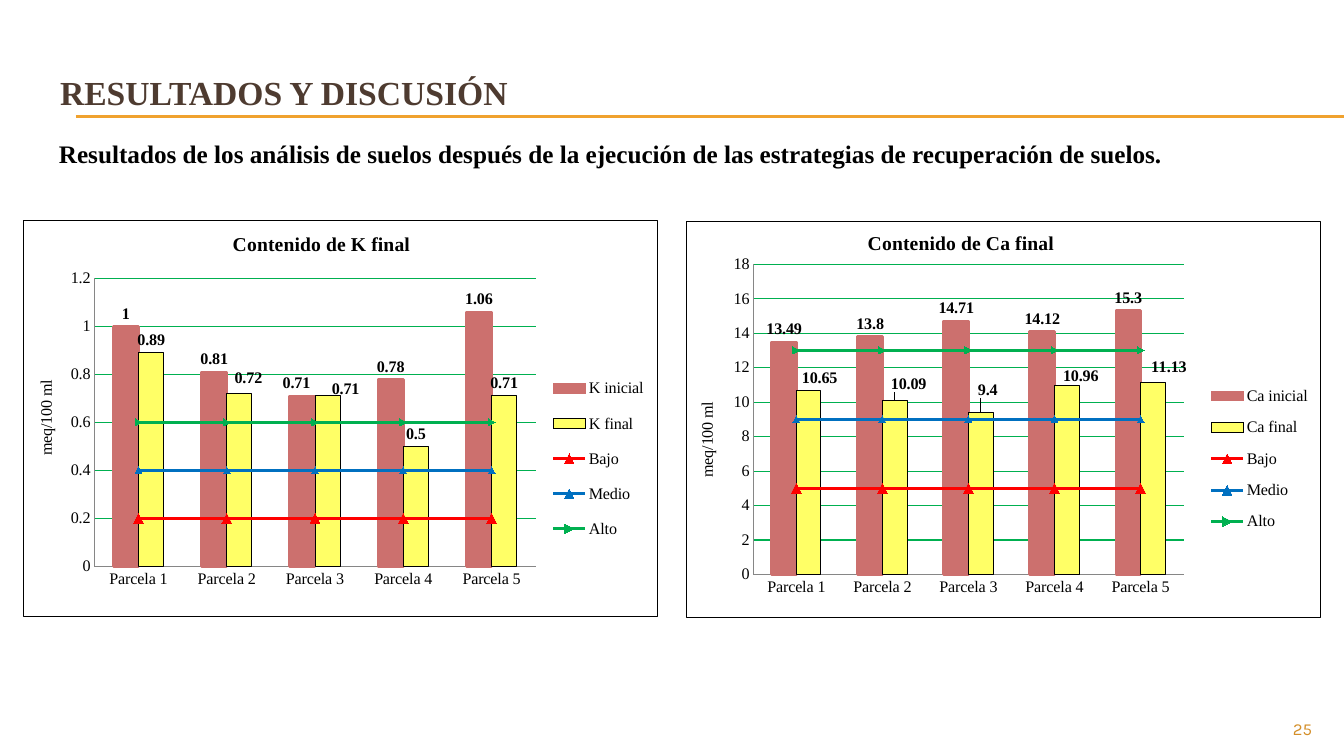
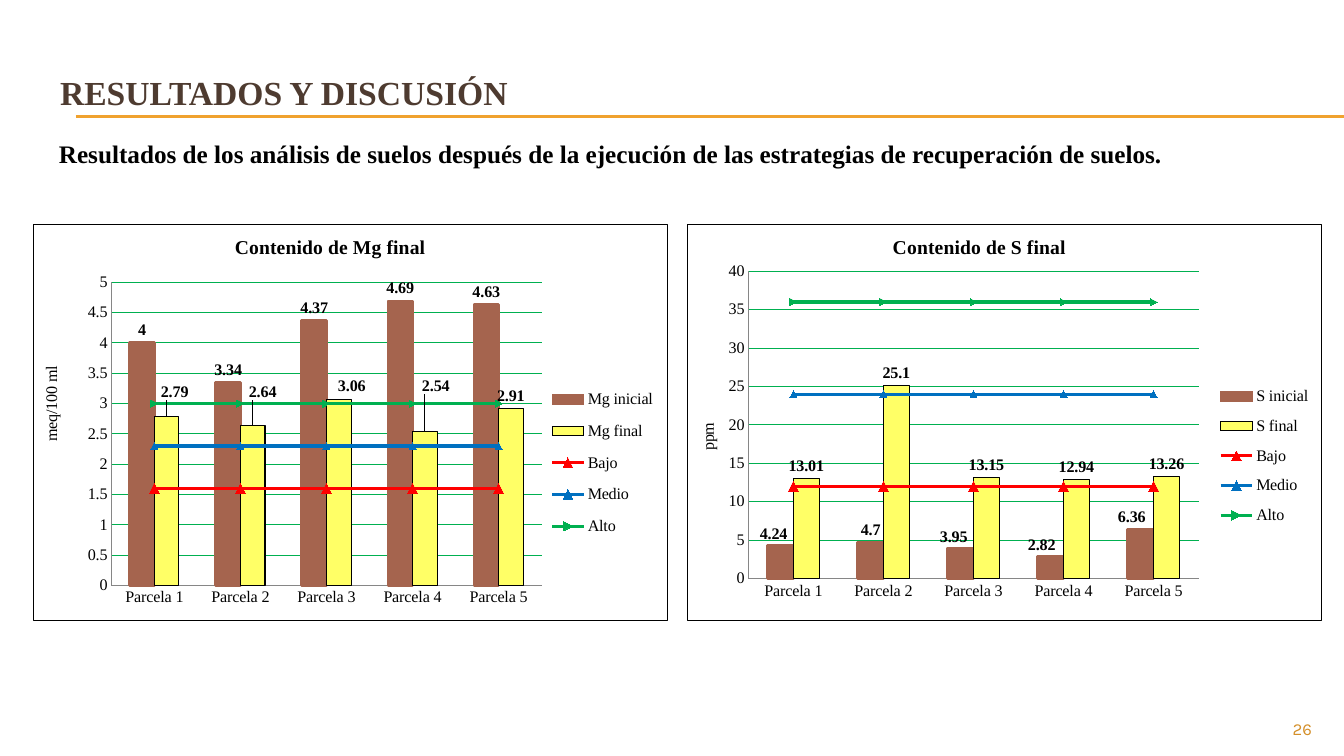
from copy import deepcopy
from dataclasses import dataclass, field

from lxml.etree import SubElement
from pptx import Presentation
from pptx.chart.data import CategoryChartData
from pptx.dml.color import RGBColor
from pptx.enum.chart import XL_CHART_TYPE as ChartType
from pptx.enum.chart import XL_LABEL_POSITION as LabelPosition
from pptx.enum.chart import XL_LEGEND_POSITION as LegendPosition
from pptx.enum.chart import XL_MARKER_STYLE as Marker
from pptx.enum.chart import XL_TICK_MARK as TickMark
from pptx.enum.shapes import MSO_CONNECTOR as Connector
from pptx.enum.text import MSO_ANCHOR as Anchor
from pptx.enum.text import MSO_AUTO_SIZE as AutoSize
from pptx.enum.text import PP_ALIGN as Align
from pptx.oxml import parse_xml
from pptx.oxml.ns import nsdecls, qn
from pptx.util import Emu, Pt

COLORS = {
    "title": "4E3B30",
    "rule": "F0A22E",
    "number": "D48F29",
    "black": "000000",
    "axis": "868686",
    "rose": "CC706E",
    "brown": "A5644E",
    "final": "FFFF66",
    "Bajo": "FF0000",
    "Medio": "0070C0",
    "Alto": "00B050",
}
SERIF = "Times New Roman"
EMU_PER_PX = 914400 / 100.8
CHART_WIDTH, CHART_HEIGHT = 635, 397
TITLE = "RESULTADOS Y DISCUSIÓN"
SUBTITLE = (
    "Resultados de los análisis de suelos después de la ejecución "
    "de las estrategias de recuperación de suelos."
)
PLOTS = [f"Parcela {number}" for number in range(1, 6)]


@dataclass
class SoilChart:
    element: str
    unit: str
    left: int
    top: int
    color: str
    initial: list
    final: list
    levels: list
    maximum: float
    step: float
    plot_box: tuple
    title_at: tuple
    unit_at: tuple
    legend_box: tuple
    initial_shifts: dict = field(default_factory=dict)
    final_shifts: dict = field(default_factory=dict)


SLIDES = {
    25: [
        SoilChart(
            "K", "meq/100 ml", 23, 220, "rose",
            [1, 0.81, 0.71, 0.78, 1.06], [0.89, 0.72, 0.71, 0.5, 0.71],
            [0.2, 0.4, 0.6], 1.2, 0.2,
            (71, 58, 442, 289), (206, 7), (10, 157), (519, 142, 114, 194),
            {2: (-6, 0)}, {1: (9, -3), 2: (18, 6)},
        ),
        SoilChart(
            "Ca", "meq/100 ml", 686, 221, "rose",
            [13.49, 13.8, 14.71, 14.12, 15.3], [10.65, 10.09, 9.4, 10.96, 11.13],
            [5, 9, 13], 18, 2,
            (67, 43, 431, 311), (178, 5), (8, 178), (517, 152, 114, 172),
            {}, {0: (11, 0), 1: (14, -4), 2: (7, -10), 3: (14, 3), 4: (16, -3)},
        ),
    ],
    26: [
        SoilChart(
            "Mg", "meq/100 ml", 33, 224, "brown",
            [4, 3.34, 4.37, 4.69, 4.63], [2.79, 2.64, 3.06, 2.54, 2.91],
            [1.6, 2.3, 3], 5, 0.5,
            (78, 58, 431, 304), (198, 6), (5, 139), (511, 152, 118, 174),
            {}, {0: (8, -12), 1: (10, -21), 2: (13, -1), 3: (11, -33)},
        ),
        SoilChart(
            "S", "ppm", 687, 224, "brown",
            [4.24, 4.7, 3.95, 2.82, 6.36], [13.01, 25.1, 13.15, 12.94, 13.26],
            [12, 24, 36], 40, 5,
            (61, 47, 451, 308), (202, 6), (8, 196), (526, 151, 104, 162),
            {0: (-7, 1), 2: (-7, 1), 3: (-9, 1), 4: (-9, 0)},
        ),
    ],
}


def px(value):
    return Emu(round(value * EMU_PER_PX))


def rgb(name):
    return RGBColor.from_string(COLORS[name])


def style_font(font, size, color="black", bold=False, name=SERIF):
    font.name = name
    font.size = Pt(size)
    font.bold = bold
    font.color.rgb = rgb(color)


def style_line(line, color, width):
    line.color.rgb = rgb(color)
    line.width = Pt(width)


def place(shape, left, top, width, height):
    shape.left, shape.top = px(left), px(top)
    shape.width, shape.height = px(width), px(height)


def add_text(slide, box, text, size, color="black", bold=False, name=SERIF):
    shape = slide.shapes.add_textbox(*map(px, box))
    shape.text_frame.word_wrap = True
    shape.text_frame.text = text
    paragraph = shape.text_frame.paragraphs[0]
    style_font(paragraph.runs[0].font, size, color, bold, name)
    return shape


def add_rules(slide, layout):
    for y in (116, 117):
        rule = slide.shapes.add_connector(
            Connector.STRAIGHT, px(76), px(y), px(1344), px(y)
        )
        style_line(rule.line, "rule", 0.75)
        SubElement(rule.element.spPr, qn("a:effectLst"))
        layout.shapes.element.append(rule.element)


def set_layout(parent, index, box, mode="edge", target=None):
    for old in parent.findall(qn("c:layout")):
        parent.remove(old)
    layout = parent.makeelement(qn("c:layout"))
    parent.insert(index, layout)
    manual = SubElement(layout, qn("c:manualLayout"))
    values = [("layoutTarget", target)] if target else []
    if mode == "edge":
        values += [("xMode", mode), ("yMode", mode)]
    sizes = (CHART_WIDTH, CHART_HEIGHT) * 2
    values += [
        (tag, f"{length / size:.4f}") for tag, length, size in zip("xywh", box, sizes)
    ]
    for tag, value in values:
        SubElement(manual, qn(f"c:{tag}")).set("val", value)


def move_levels_to_lines(chart):
    bars = chart.element.xpath("//c:barChart")[0]
    lines = parse_xml(
        f'<c:lineChart {nsdecls("c")}><c:grouping val="standard"/>'
        '<c:varyColors val="0"/><c:marker val="1"/></c:lineChart>'
    )
    marker = lines.find(qn("c:marker"))
    for series in bars.findall(qn("c:ser"))[2:]:
        for invert in series.findall(qn("c:invertIfNegative")):
            series.remove(invert)
        marker.addprevious(series)
    for axis_id in bars.findall(qn("c:axId")):
        lines.append(deepcopy(axis_id))
    bars.addnext(lines)


def label_bars(chart, index, series, shifts):
    labels = series.data_labels
    labels.show_value = True
    labels.position = LabelPosition.OUTSIDE_END
    style_font(labels.font, 11.5, bold=True)
    for point, shift in shifts.items():
        label = series.points[point].data_label
        label.position = LabelPosition.OUTSIDE_END
        style_font(label.font, 11.5, bold=True)
        element = chart.element.xpath(
            f"//c:ser[c:idx/@val='{index}']//c:dLbl[c:idx/@val='{point}']"
        )[0]
        set_layout(element, 1, shift, mode="factor")


def style_series(chart, soil):
    bar_plot, line_plot = chart.plots
    bar_plot.gap_width = 150
    bar_plot.overlap = 0
    bar_plot.vary_by_categories = False
    styles = (
        (soil.color, soil.color, 2, soil.initial_shifts),
        ("final", "black", 0.75, soil.final_shifts),
    )
    for index, (fill, line, width, shifts) in enumerate(styles):
        series = bar_plot.series[index]
        series.format.fill.solid()
        series.format.fill.fore_color.rgb = rgb(fill)
        style_line(series.format.line, line, width)
        label_bars(chart, index, series, shifts)
    for series in line_plot.series:
        low = series.name == "Bajo"
        series.smooth = False
        style_line(series.format.line, series.name, 2.25)
        series.marker.style = Marker.TRIANGLE if low else Marker.AUTOMATIC
        series.marker.size = 7 if low else 5
        series.marker.format.fill.solid()
        series.marker.format.fill.fore_color.rgb = rgb(series.name)
        style_line(series.marker.format.line, series.name, 0.75)


def style_axes(chart, soil):
    values = chart.value_axis
    values.minimum_scale, values.maximum_scale = 0, soil.maximum
    values.major_unit = soil.step
    style_line(values.major_gridlines.format.line, "Alto", 0.75)
    for axis in (values, chart.category_axis):
        axis.major_tick_mark = axis.minor_tick_mark = TickMark.NONE
        style_line(axis.format.line, "axis", 0.75)
    set_title(values.axis_title, soil.unit, 11.5, False)
    body = chart.element.xpath("//c:valAx/c:title//a:bodyPr")[0]
    body.set("rot", "-5400000")
    body.set("vert", "horz")


def set_title(title, text, size, bold):
    title.text_frame.text = text
    style_font(title.text_frame.paragraphs[0].runs[0].font, size, bold=bold)


def add_border(chart):
    border = parse_xml(
        f'<c:spPr {nsdecls("c", "a")}><a:solidFill><a:srgbClr val="FFFFFF"/></a:solidFill>'
        f'<a:ln w="9525"><a:solidFill><a:srgbClr val="{COLORS["black"]}"/>'
        "</a:solidFill></a:ln></c:spPr>"
    )
    chart.element.find(qn("c:chart")).addnext(border)


def add_soil_chart(slide, soil):
    data = CategoryChartData()
    data.categories = PLOTS
    data.add_series(f"{soil.element} inicial", soil.initial)
    data.add_series(f"{soil.element} final", soil.final)
    for name, level in zip(("Bajo", "Medio", "Alto"), soil.levels):
        data.add_series(name, [level] * len(PLOTS))
    box = map(px, (soil.left, soil.top, CHART_WIDTH, CHART_HEIGHT))
    chart = slide.shapes.add_chart(ChartType.COLUMN_CLUSTERED, *box, data).chart
    style_font(chart.font, 11.5)
    move_levels_to_lines(chart)
    style_series(chart, soil)
    style_axes(chart, soil)
    chart.has_title = True
    set_title(chart.chart_title, f"Contenido de {soil.element} final", 14, True)
    chart.has_legend = True
    chart.legend.position = LegendPosition.RIGHT
    chart.legend.include_in_layout = False
    add_border(chart)
    find = chart.element.xpath
    set_layout(find("//c:plotArea")[0], 0, soil.plot_box, target="inner")
    set_layout(find("//c:chart/c:title")[0], 1, soil.title_at)
    set_layout(find("//c:valAx/c:title")[0], 1, soil.unit_at)
    set_layout(find("//c:legend")[0], 1, soil.legend_box)


def add_frame(slide, number):
    title = slide.shapes.title
    place(title, 50, 46, 501, 93)
    title.text_frame.text = TITLE
    title.text_frame.vertical_anchor = Anchor.MIDDLE
    paragraph = title.text_frame.paragraphs[0]
    paragraph.alignment = Align.LEFT
    style_font(paragraph.runs[0].font, 24, "title", True)
    page = add_text(slide, (1210, 714, 112, 27), str(number), 12, "number", name="Karla")
    page.text_frame.paragraphs[0].alignment = Align.RIGHT
    subtitle = add_text(slide, (49, 133, 1193, 72), SUBTITLE, 18, bold=True)
    subtitle.text_frame.auto_size = AutoSize.SHAPE_TO_FIT_TEXT


def main():
    presentation = Presentation()
    presentation.slide_width, presentation.slide_height = px(1344), px(756)
    layout = presentation.slide_layouts[5]
    for number, soils in SLIDES.items():
        slide = presentation.slides.add_slide(layout)
        add_frame(slide, number)
        for soil in soils:
            add_soil_chart(slide, soil)
    add_rules(slide, layout)
    presentation.save("out.pptx")


if __name__ == "__main__":
    main()
